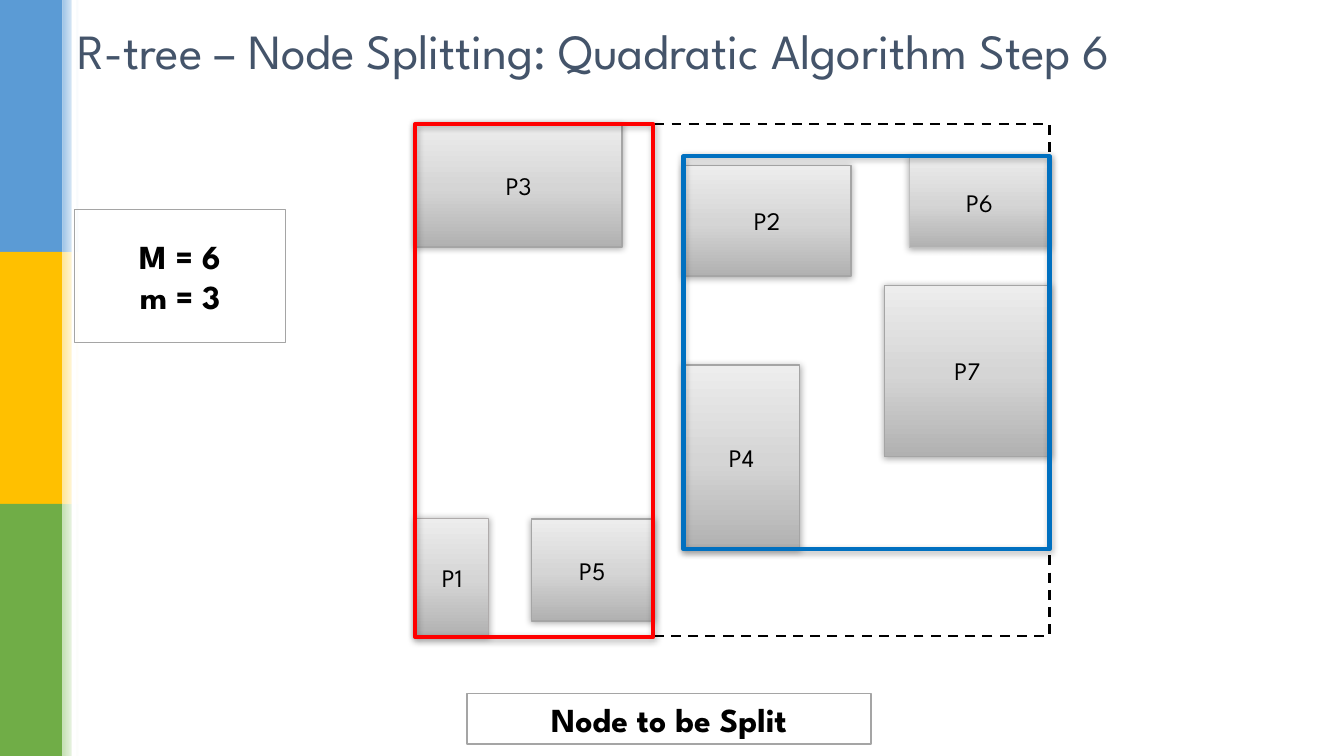
from dataclasses import dataclass

from lxml.etree import SubElement
from pptx import Presentation
from pptx.dml.color import RGBColor
from pptx.enum.dml import MSO_LINE
from pptx.enum.shapes import MSO_SHAPE
from pptx.enum.text import MSO_ANCHOR, PP_ALIGN
from pptx.oxml.ns import qn
from pptx.util import Inches, Pt


@dataclass(frozen=True)
class Theme:
    font: str = "League Spartan"
    title_size: float = 35.1
    label_size: int = 24
    entry_size: int = 18
    title: str = "44546A"
    text: str = "000000"
    white: str = "FFFFFF"
    border: str = "A5A5A5"
    soft_border: str = "BFBFBF"
    dark_border: str = "AFABAB"
    first_group: str = "FF0000"
    second_group: str = "0070C0"
    entry_stops: tuple = ((0, "B1B1B1"), (48, "D5D5D5"), (100, "EDEDED"))
    # Solid band colour and the tint that fades out beside it
    bands: tuple = (("5B9BD5", "9DC3E6"), ("FFC000", "FFE699"), ("70AD47", "C5E0B4"))


THEME = Theme()

# Entries: name, left, top, width, height inside the node, border, border width
ENTRIES = (
    ("P2", 2.66, 0.41, 1.66, 1.1, THEME.border, 1),
    ("P1", 0, 3.91, 0.73, 1.18, THEME.dark_border, 0.75),
    ("P3", 0, 0, 2.05, 1.22, THEME.border, 1),
    ("P7", 4.65, 1.6, 1.65, 1.7, THEME.border, 1),
    ("P5", 1.15, 3.92, 1.21, 1.01, THEME.border, 1),
    ("P4", 2.66, 2.39, 1.15, 1.83, THEME.border, 1),
    ("P6", 4.9, 0.32, 1.39, 0.91, THEME.soft_border, 0.75),
)
# Bounding rectangles of the two groups inside the node
GROUPS = (
    (0, 0, 2.36, 5.09, THEME.first_group),
    (2.66, 0.32, 3.63, 3.9, THEME.second_group),
)


def add_rectangle(slide, box, fill=None, line=None, line_width=1):
    shape = slide.shapes.add_shape(MSO_SHAPE.RECTANGLE, *map(Inches, box))
    shape.shadow.inherit = False
    if fill:
        shape.fill.solid()
        shape.fill.fore_color.rgb = RGBColor.from_string(fill)
    else:
        shape.fill.background()
    if line:
        shape.line.color.rgb = RGBColor.from_string(line)
        shape.line.width = Pt(line_width)
    else:
        shape.line.fill.background()
    return shape


def set_gradient(shape, stops, angle):
    """Fill with any number of stops; the angle runs clockwise."""
    shape.fill.gradient()
    gradient = shape.element.spPr.find(qn("a:gradFill"))
    for child in list(gradient):
        gradient.remove(child)
    stop_list = SubElement(gradient, qn("a:gsLst"))
    for position, color in stops:
        stop = SubElement(stop_list, qn("a:gs"), pos=str(position * 1000))
        SubElement(stop, qn("a:srgbClr"), val=color)
    SubElement(gradient, qn("a:lin"), ang=str(angle * 60000), scaled="0")


def add_shadow(shape):
    effects = shape.element.spPr.find(qn("a:effectLst"))
    shadow = SubElement(effects, qn("a:outerShdw"), blurRad=str(Pt(5)), dist=str(Pt(1)),
                        dir="5400000", algn="ctr", rotWithShape="0")
    color = SubElement(shadow, qn("a:srgbClr"), val=THEME.text)
    SubElement(color, qn("a:alpha"), val="32000")


def write(shape, lines, size, color=THEME.text, bold=False, align=PP_ALIGN.CENTER):
    frame = shape.text_frame
    frame.word_wrap = True
    frame.vertical_anchor = MSO_ANCHOR.MIDDLE
    for index, line in enumerate(lines):
        para = frame.add_paragraph() if index else frame.paragraphs[0]
        para.alignment = align
        span = para.add_run()
        span.text = line
        span.font.name = THEME.font
        span.font.size = Pt(size)
        span.font.bold = bold
        span.font.color.rgb = RGBColor.from_string(color)


def add_side_bands(slide, box):
    left, top, width, height = box
    solid_width, fade_width = 0.62, 0.16
    band_height = height / len(THEME.bands)
    for index, (solid, tint) in enumerate(THEME.bands):
        band_top = top + index * band_height
        add_rectangle(slide, (left, band_top, solid_width, band_height), solid)
        fade = add_rectangle(slide, (left + solid_width, band_top, fade_width, band_height))
        set_gradient(fade, ((0, tint), (100, THEME.white)), 0)
    # White strip that cuts the fade short
    add_rectangle(slide, (left + 0.71, top, width - 0.73, height), THEME.white)


def add_title(slide, box, text):
    title = slide.shapes.title
    title.left, title.top, title.width, title.height = map(Inches, box)
    write(title, [text], THEME.title_size, THEME.title, align=PP_ALIGN.LEFT)
    # Bring the title in front of the side bands
    slide.shapes.element.append(title.element)


def add_node(slide, box):
    left, top = box[:2]
    outline = add_rectangle(slide, box, line=THEME.text, line_width=1.75)
    outline.line.dash_style = MSO_LINE.DASH
    # Entries of the node
    for name, x, y, width, height, border, border_width in ENTRIES:
        entry = add_rectangle(slide, (left + x, top + y, width, height),
                              line=border, line_width=border_width)
        set_gradient(entry, THEME.entry_stops, 270)
        add_shadow(entry)
        write(entry, [name], THEME.entry_size)
    # Bounding rectangles after the split
    for x, y, width, height, color in GROUPS:
        group = add_rectangle(slide, (left + x, top + y, width, height),
                              line=color, line_width=3)
        add_shadow(group)


def add_label(slide, box, lines):
    label = add_rectangle(slide, box, line=THEME.border)
    write(label, lines, THEME.label_size, bold=True)


def main():
    deck = Presentation()
    deck.slide_width, deck.slide_height = Inches(13.33), Inches(7.5)
    slide = deck.slides.add_slide(deck.slide_layouts[5])
    add_side_bands(slide, (0, 0, 0.78, 7.5))
    add_title(slide, (0.67, 0.16, 12.21, 0.66),
              "R-tree – Node Splitting: Quadratic Algorithm Step 6")
    add_node(slide, (4.12, 1.23, 6.29, 5.08))
    add_label(slide, (4.63, 6.88, 4.01, 0.5), ["Node to be Split"])
    add_label(slide, (0.74, 2.08, 2.09, 1.32), ["M = 6", "m = 3"])
    deck.save("out.pptx")


if __name__ == "__main__":
    main()
